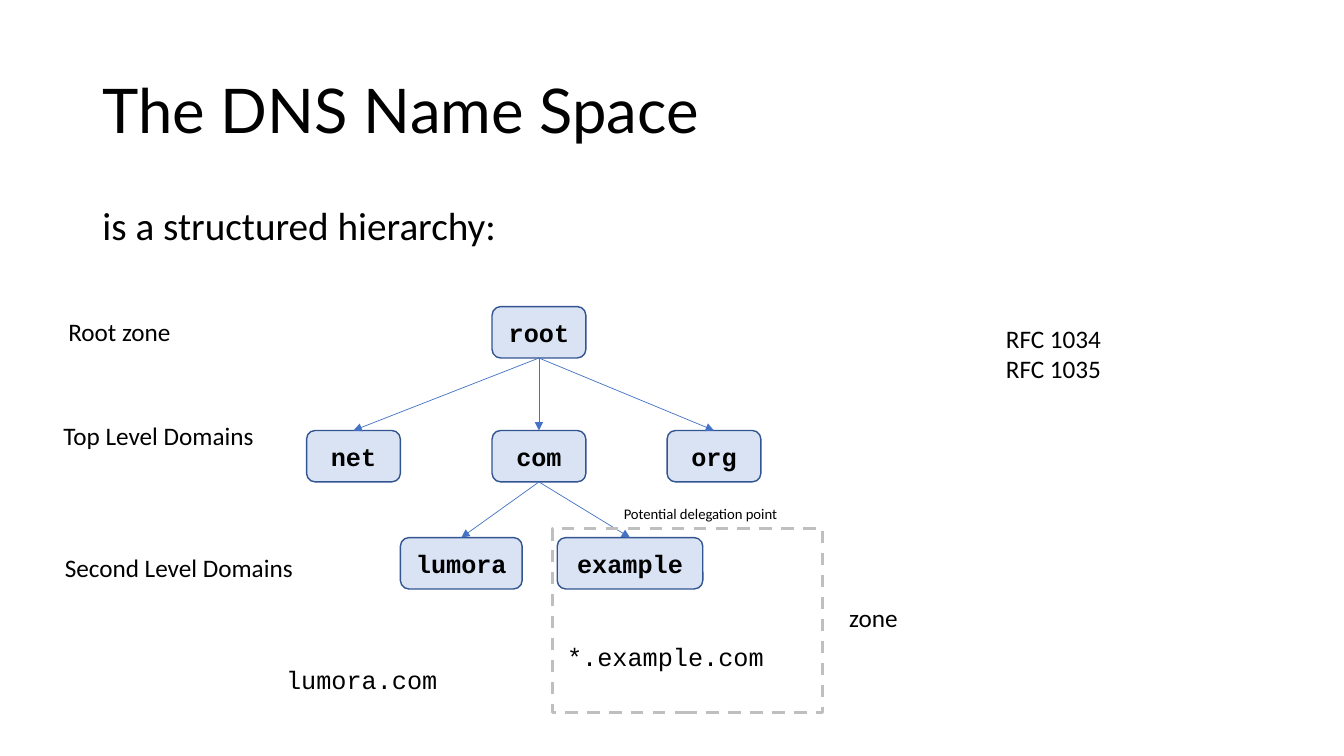
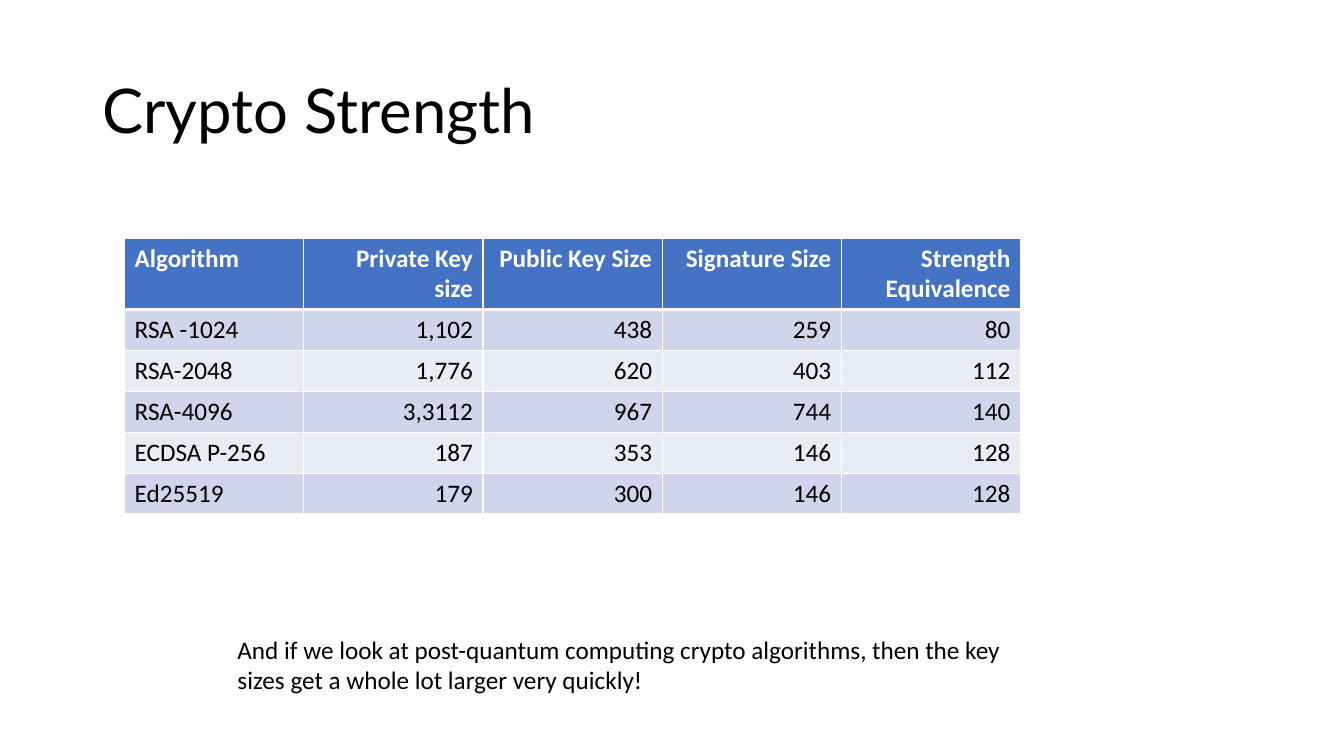
from dataclasses import dataclass
from typing import NamedTuple

from lxml import etree
from pptx import Presentation
from pptx.dml.color import RGBColor
from pptx.enum.dml import MSO_LINE
from pptx.enum.shapes import MSO_CONNECTOR, MSO_SHAPE
from pptx.enum.text import MSO_ANCHOR, MSO_AUTO_SIZE, PP_ALIGN
from pptx.oxml.ns import qn
from pptx.util import Pt

LEFT, CENTER, RIGHT = PP_ALIGN.LEFT, PP_ALIGN.CENTER, PP_ALIGN.RIGHT
TOP, MIDDLE = MSO_ANCHOR.TOP, MSO_ANCHOR.MIDDLE
FIXED, FIT_SHAPE = MSO_AUTO_SIZE.NONE, MSO_AUTO_SIZE.SHAPE_TO_FIT_TEXT
ROUNDED, RECTANGLE = MSO_SHAPE.ROUNDED_RECTANGLE, MSO_SHAPE.RECTANGLE
STRAIGHT, DASH = MSO_CONNECTOR.STRAIGHT, MSO_LINE.DASH
TITLE_AND_BODY, TITLE_ONLY = 1, 5
TOP_SITE, BOTTOM_SITE = 0, 2


@dataclass(frozen=True)
class Theme:
    ink: str = "000000"
    paper: str = "FFFFFF"
    accent: str = "4472C4"
    node_fill: str = "DAE3F3"
    node_line: str = "325491"
    zone_line: str = "BFBFBF"
    bands: tuple = ("CFD5EA", "E9EBF5")
    title_font: str = "Lato"
    text_font: str = "Calibri"
    code_font: str = "Courier New"
    title_size: float = 44
    lead_size: float = 28
    text_size: float = 18
    note_size: float = 10.5


class Box(NamedTuple):
    left: float
    top: float
    width: float
    height: float

    def inner(self, left, top, width, height):
        return Box(self.left + left, self.top + top, width, height)

    def lengths(self):
        return [Pt(value) for value in self]


THEME = Theme()
TITLE_BOX = Box(66, 28.8, 828, 104.4)
LEAD_BOX = Box(66, 144, 828, 52)
NODE_HEIGHT = 36.75
TIER_TOPS = (0, 88.5, 165)
NODES = {
    "root": (0, 132.5, 67),
    "net": (1, 0, 67),
    "com": (1, 132.5, 67),
    "org": (1, 257.5, 67),
    "lumora": (2, 67, 87),
    "example": (2, 179, 104),
}
BRANCHES = {"root": ("net", "com", "org"), "com": ("lumora", "example")}
KEY_SIZES = (
    ("Algorithm", "Private Key size", "Public Key Size", "Signature Size", "Strength Equivalence"),
    ("RSA -1024", "1,102", "438", "259", "80"),
    ("RSA-2048", "1,776", "620", "403", "112"),
    ("RSA-4096", "3,3112", "967", "744", "140"),
    ("ECDSA P-256", "187", "353", "146", "128"),
    ("Ed25519", "179", "300", "146", "128"),
)


def apply(target, values):
    for name, value in values.items():
        setattr(target, name, value)


def rgb(colour):
    return RGBColor.from_string(colour)


def paint(fill, colour):
    fill.solid()
    fill.fore_color.rgb = rgb(colour)


def outline(line, colour, width):
    line.color.rgb = rgb(colour)
    line.width = Pt(width)


def write(frame, text, size=THEME.text_size, font=THEME.text_font, colour=THEME.ink,
          bold=False, **paragraph_format):
    frame.text = text
    for paragraph in frame.paragraphs:
        apply(paragraph, {"alignment": LEFT, **paragraph_format})
        for run in paragraph.runs:
            apply(run.font, {"size": Pt(size), "name": font, "bold": bold})
            run.font.color.rgb = rgb(colour)


def fill_placeholder(placeholder, box, text, anchor, **text_format):
    apply(placeholder, dict(zip(("left", "top", "width", "height"), box.lengths())))
    frame = placeholder.text_frame
    apply(frame, {"vertical_anchor": anchor, "auto_size": FIXED, "word_wrap": True})
    write(frame, text, line_spacing=0.9, **text_format)
    return frame


def add_titled_slide(deck, layout, title):
    slide = deck.slides.add_slide(deck.slide_layouts[layout])
    fill_placeholder(slide.shapes.title, TITLE_BOX, title, MIDDLE,
                     size=THEME.title_size, font=THEME.title_font)
    return slide


def add_lead(slide, box, text):
    frame = fill_placeholder(slide.placeholders[1], box, text, TOP,
                             size=THEME.lead_size, space_before=Pt(10))
    properties = frame.paragraphs[0]._p.get_or_add_pPr()
    properties.set("marL", "0")
    properties.set("indent", "0")
    etree.SubElement(properties, qn("a:buNone"))


def add_label(slide, box, text, wrap=False, **text_format):
    frame = slide.shapes.add_textbox(*box.lengths()).text_frame
    apply(frame, {"word_wrap": wrap, "auto_size": FIT_SHAPE})
    write(frame, text, **text_format)


def add_node(slide, box, name):
    node = slide.shapes.add_shape(ROUNDED, *box.lengths())
    node.shadow.inherit = False
    paint(node.fill, THEME.node_fill)
    outline(node.line, THEME.node_line, 1)
    node.text_frame.vertical_anchor = MIDDLE
    write(node.text_frame, name, font=THEME.code_font, bold=True, alignment=CENTER)
    return node


def add_branch(slide, parent, child):
    branch = slide.shapes.add_connector(STRAIGHT, 0, 0, 0, 0)
    branch.begin_connect(parent, BOTTOM_SITE)
    branch.end_connect(child, TOP_SITE)
    outline(branch.line, THEME.accent, 0.5)
    etree.SubElement(branch.line._get_or_add_ln(), qn("a:tailEnd"), type="triangle")
    etree.SubElement(branch._element.spPr, qn("a:effectLst"))


def add_name_tree(slide, box):
    nodes = {
        name: add_node(slide, box.inner(left, TIER_TOPS[tier], width, NODE_HEIGHT), name)
        for name, (tier, left, width) in NODES.items()
    }
    for parent, children in BRANCHES.items():
        for child in children:
            add_branch(slide, nodes[parent], nodes[child])


def add_tier_labels(slide, box):
    tiers = (
        ("Root zone", 3.5, 0, 88.5),
        ("Top Level Domains", 0, 74.25, 152),
        ("Second Level Domains", 1, 168.5, 179),
    )
    for text, left, top, width in tiers:
        add_label(slide, box.inner(left, top, width, 29), text)


def add_zone(slide, box):
    zone = slide.shapes.add_shape(RECTANGLE, *box.lengths())
    zone.shadow.inherit = False
    zone.fill.background()
    outline(zone.line, THEME.zone_line, 2.25)
    zone.line.dash_style = DASH
    add_label(slide, box.inner(3.5, 77, 155.5, 29), "*.example.com", font=THEME.code_font)
    add_label(slide, box.inner(44, -20.2, 126.7, 20), "Potential delegation point",
              size=THEME.note_size)
    add_label(slide, box.inner(205, 49.7, 50, 29), "zone")


def set_borders(cell, edges):
    properties = cell._tc.get_or_add_tcPr()
    for position, (edge, width) in enumerate(edges.items()):
        border = etree.Element(qn(f"a:ln{edge}"), w=str(Pt(width)))
        colour = etree.SubElement(etree.SubElement(border, qn("a:solidFill")), qn("a:srgbClr"))
        colour.set("val", THEME.paper)
        properties.insert(position, border)


def add_key_table(slide, box, rows, header_height):
    columns = len(rows[0])
    table = slide.shapes.add_table(len(rows), columns, *box.lengths()).table
    row_height = (box.height - header_height) / (len(rows) - 1)
    for column in table.columns:
        column.width = Pt(box.width / columns)
    for index, values in enumerate(rows):
        header = index == 0
        table.rows[index].height = Pt(header_height if header else row_height)
        fill = THEME.accent if header else THEME.bands[(index - 1) % 2]
        edges = {"L": 1, "R": 1, "T": 3 if index == 1 else 1, "B": 3 if header else 1}
        for position, value in enumerate(values):
            cell = table.cell(index, position)
            paint(cell.fill, fill)
            set_borders(cell, edges)
            write(cell.text_frame, value, bold=header,
                  colour=THEME.paper if header else THEME.ink,
                  alignment=RIGHT if position else LEFT)


def build_name_space(deck):
    slide = add_titled_slide(deck, TITLE_AND_BODY, "The DNS Name Space")
    add_lead(slide, LEAD_BOX, "is a structured hierarchy:")
    add_name_tree(slide, Box(219, 219, 324.5, 201.75))
    add_tier_labels(slide, Box(38.2, 222.5, 180, 197.5))
    add_label(slide, Box(711.4, 227.5, 83.5, 51), "RFC 1034\nRFC 1035")
    add_label(slide, Box(197.3, 471, 123, 29), "lumora.com", font=THEME.code_font)
    add_zone(slide, Box(394.5, 377.3, 193, 131.8))


def build_crypto_strength(deck):
    slide = add_titled_slide(deck, TITLE_ONLY, "Crypto Strength")
    add_key_table(slide, Box(89, 170, 640, 196.4), KEY_SIZES, 50.4)
    add_label(slide, Box(162.5, 449.3, 574, 51),
              "And if we look at post-quantum computing crypto algorithms, "
              "then the key sizes get a whole lot larger very quickly!", wrap=True)


def main():
    deck = Presentation()
    apply(deck, {"slide_width": Pt(960), "slide_height": Pt(540)})
    build_name_space(deck)
    build_crypto_strength(deck)
    deck.save("out.pptx")


if __name__ == "__main__":
    main()
